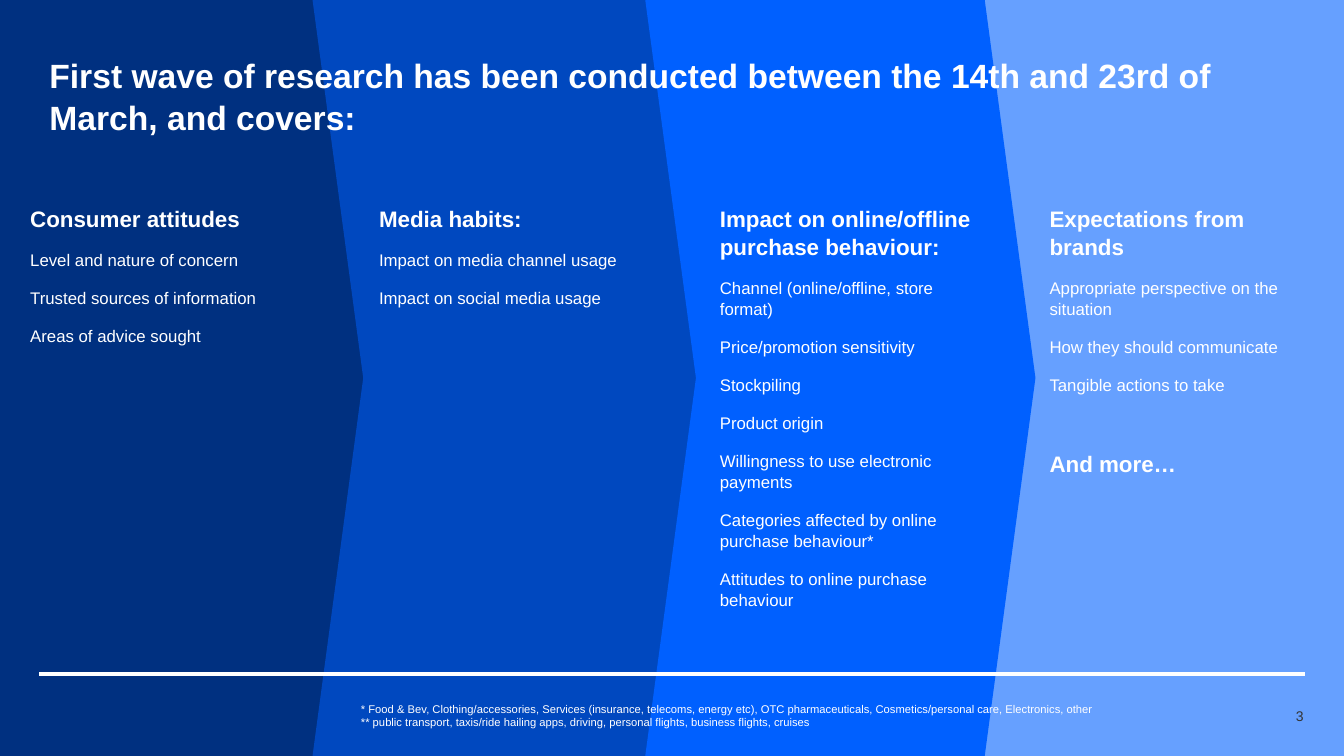
from pptx import Presentation
from pptx.dml.color import RGBColor
from pptx.enum.shapes import MSO_CONNECTOR, MSO_SHAPE
from pptx.enum.text import MSO_ANCHOR, MSO_AUTO_SIZE, PP_ALIGN
from pptx.oxml.ns import qn
from pptx.util import Pt
from lxml.etree import SubElement

PX = 9144
COLORS = {
    "navy": "003080",
    "royal": "0048BF",
    "bright": "0060FF",
    "sky": "66A0FF",
    "white": "FFFFFF",
    "grey": "333333",
}


def add_run(paragraph, text, size, bold=False, color="white"):
    run = paragraph.add_run()
    run.text = text
    run.font.name = "Arial"
    run.font.size = Pt(size)
    run.font.bold = bold
    run.font.color.rgb = RGBColor.from_string(COLORS[color])


def add_text_frame(left, top, width, height, anchor=MSO_ANCHOR.TOP):
    box = slide.shapes.add_textbox(left * PX, top * PX, width * PX, height * PX)
    frame = box.text_frame
    frame.word_wrap = True
    frame.vertical_anchor = anchor
    frame.margin_left = frame.margin_top = frame.margin_right = frame.margin_bottom = 0
    return frame


presentation = Presentation()
presentation.slide_width = 1333 * PX
presentation.slide_height = 750 * PX
slide = presentation.slides.add_slide(presentation.slide_layouts[5])

panels = [
    (MSO_SHAPE.RECTANGLE, 829, 504, "sky"),
    (MSO_SHAPE.RECTANGLE, 0, 502, "navy"),
    (MSO_SHAPE.CHEVRON, 310, 387, "royal"),
    (MSO_SHAPE.CHEVRON, 640, 387, "bright"),
]
background = slide.shapes.add_group_shape()
for kind, left, width, color in panels:
    panel = background.shapes.add_shape(kind, left * PX, 0, width * PX, 750 * PX)
    panel.shadow.inherit = False
    panel.fill.solid()
    panel.fill.fore_color.rgb = RGBColor.from_string(COLORS[color])
    panel.line.fill.background()
    if kind == MSO_SHAPE.CHEVRON:
        panel.adjustments[0] = 0.13

title = slide.shapes.title
background.element.addnext(title.element)
title.left, title.top, title.width, title.height = 39 * PX, 47 * PX, 1254 * PX, 44 * PX
title.text_frame.word_wrap = True
title.text_frame.auto_size = MSO_AUTO_SIZE.NONE
title.text_frame.vertical_anchor = MSO_ANCHOR.TOP
paragraph = title.text_frame.paragraphs[0]
paragraph.alignment = PP_ALIGN.LEFT
paragraph.line_spacing = 1.05
paragraph.space_before = Pt(0)
add_run(paragraph, "First wave of research has been conducted between the 14th and 23rd of March, and covers:", 24, True)

columns = [
    (30, 257, "Consumer attitudes", [
        "Level and nature of concern",
        "Trusted sources of information",
        "Areas of advice sought",
    ]),
    (376, 260, "Media habits:", [
        "Impact on media channel usage",
        "Impact on social media usage",
    ]),
    (714, 256, "Impact on online/offline purchase behaviour:", [
        "Channel (online/offline, store format)",
        "Price/promotion sensitivity",
        "Stockpiling",
        "Product origin",
        "Willingness to use electronic payments",
        "Categories affected by online purchase behaviour*",
        "Attitudes to online purchase behaviour",
    ]),
    (1041, 253, "Expectations from brands", [
        "Appropriate perspective on the situation",
        "How they should communicate",
        "Tangible actions to take",
    ]),
]
for left, width, heading, topics in columns:
    frame = add_text_frame(left, 202, width, 405)
    paragraph = frame.paragraphs[0]
    paragraph.line_spacing = 1.05
    add_run(paragraph, heading, 16, True)
    for topic in topics:
        paragraph = frame.add_paragraph()
        paragraph.line_spacing = 1.05
        paragraph.space_before = Pt(12)
        add_run(paragraph, topic, 12)

closing = frame.add_paragraph()
closing.line_spacing = 1.05
closing.space_before = Pt(38.5)
add_run(closing, "And more…", 16, True)

rule = slide.shapes.add_connector(MSO_CONNECTOR.STRAIGHT, 39 * PX, 669 * PX, 1294 * PX, 669 * PX)
rule.line.color.rgb = RGBColor.from_string(COLORS["white"])
rule.line.width = Pt(3)
SubElement(rule.element.spPr, qn("a:effectLst"))

frame = add_text_frame(358, 699, 820, 22, MSO_ANCHOR.MIDDLE)
add_run(frame.paragraphs[0], "* Food & Bev, Clothing/accessories, Services (insurance, telecoms, energy etc), OTC pharmaceuticals, Cosmetics/personal care, Electronics, other", 8)
add_run(frame.add_paragraph(), "** public transport, taxis/ride hailing apps, driving, personal flights, business flights, cruises", 8)

frame = add_text_frame(1187, 699, 106, 22, MSO_ANCHOR.MIDDLE)
frame.paragraphs[0].alignment = PP_ALIGN.RIGHT
add_run(frame.paragraphs[0], "3", 10, color="grey")

presentation.save("out.pptx")
